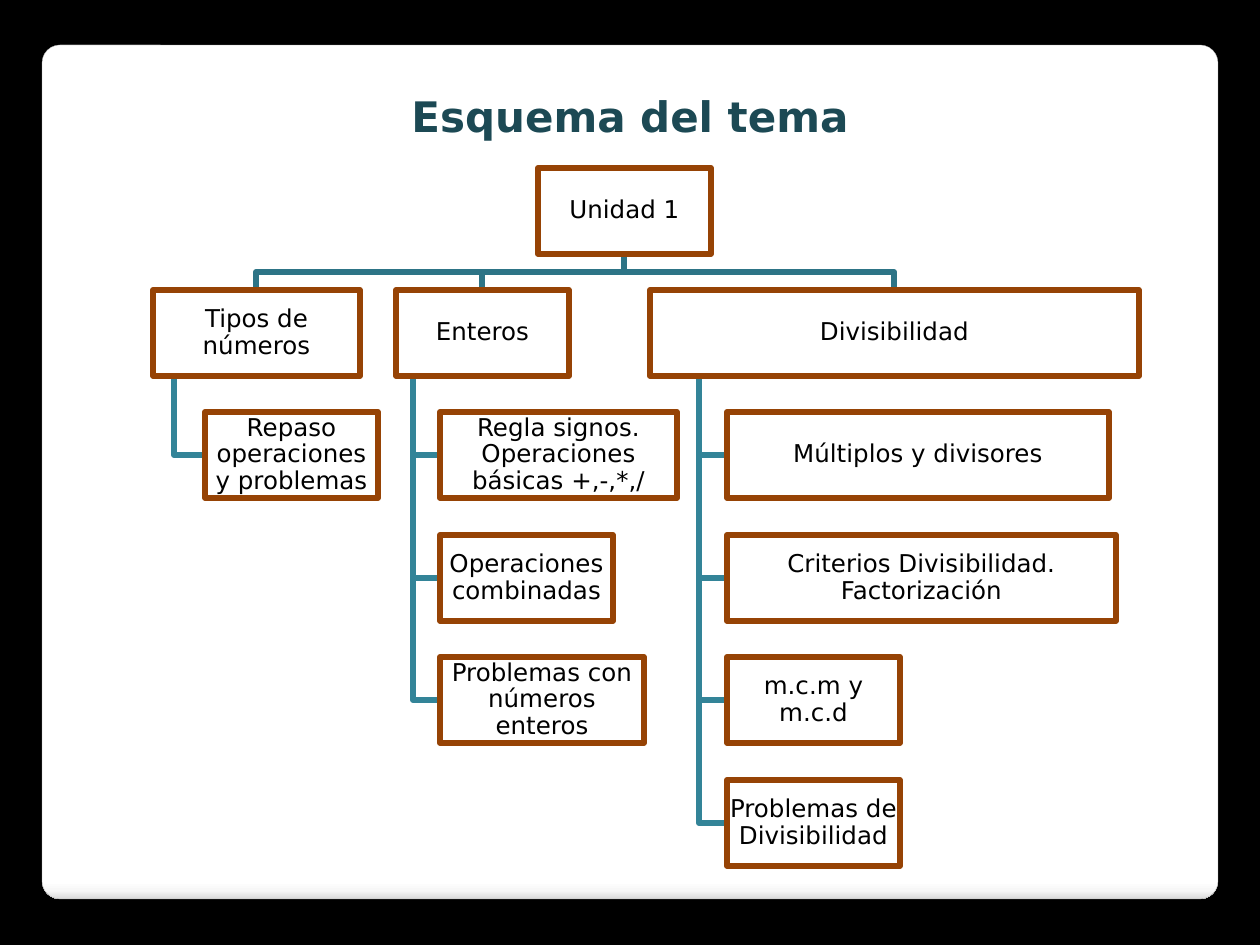
"""Build the topic outline slide: a three-branch organisation chart on a white panel."""
from lxml import etree
from pptx import Presentation
from pptx.dml.color import RGBColor
from pptx.enum.shapes import MSO_SHAPE as SHAPE
from pptx.enum.text import MSO_ANCHOR as ANCHOR, MSO_AUTO_SIZE as AUTO_SIZE, PP_ALIGN as ALIGN
from pptx.oxml.ns import qn
from pptx.util import Emu, Pt

PX = 914400 / 126
FONT = "DejaVu Sans"
BLACK = RGBColor(0x00, 0x00, 0x00)
WHITE = RGBColor(0xFF, 0xFF, 0xFF)
PANEL_EDGE = RGBColor(0xA4, 0xA4, 0xA4)
TITLE = RGBColor(0x1C, 0x49, 0x54)
BROWN = RGBColor(0x96, 0x43, 0x05)
TEAL_TOP = RGBColor(0x2D, 0x74, 0x86)
TEAL_SUB = RGBColor(0x33, 0x84, 0x98)
PANEL_STOPS = [(0, "FFFFFF"), (98, "FFFFFF"), (99, "F7F7F7"), (100, "DADADA")]

BOX_W, BOX_H = 173, 86
LINE_W = Pt(3.35)
ROOT = ("Unidad 1", 538, BOX_W)
BRANCHES = [
    ("Tipos de números", 153, 207, 205, [("Repaso operaciones y problemas", BOX_W)]),
    ("Enteros", 396, BOX_W, 440, [
        ("Regla signos. Operaciones básicas +,-,*,/", 237),
        ("Operaciones combinadas", BOX_W),
        ("Problemas con números enteros", 204),
    ]),
    ("Divisibilidad", 650, 489, 727, [
        ("Múltiplos y divisores", 382),
        ("Criterios Divisibilidad. Factorización", 389),
        ("m.c.m y m.c.d", BOX_W),
        ("Problemas de Divisibilidad", BOX_W),
    ]),
]


def px(*values):
    return [Emu(round(v * PX)) for v in values]


def row_top(row):
    return 168 + row * 612 // 5


def style_text(p, size, color, bold=False):
    p.alignment = ALIGN.CENTER
    font = p.runs[0].font
    font.name, font.size, font.bold = FONT, Pt(size), bold
    font.color.rgb = color


def add_panel(s):
    sp = s.shapes.add_shape(SHAPE.ROUNDED_RECTANGLE, *px(42, 45, 1176, 854))
    sp.adjustments[0] = 0.021
    sp.shadow.inherit = False
    sp.fill.gradient()
    sp.fill.gradient_angle = 270
    stops = sp._element.spPr.find(".//" + qn("a:gsLst"))
    for old in list(stops):
        stops.remove(old)
    for pos, color in PANEL_STOPS:
        stop = etree.SubElement(stops, qn("a:gs"), pos=str(pos * 1000))
        etree.SubElement(stop, qn("a:srgbClr"), val=color)
    sp.line.color.rgb = PANEL_EDGE
    sp.line.width = Pt(0.16)


def add_title(s, text):
    tf = s.shapes.add_textbox(*px(49, 84, 1162, 63)).text_frame
    tf.word_wrap = True
    tf.auto_size = AUTO_SIZE.SHAPE_TO_FIT_TEXT
    tf.text = text
    style_text(tf.paragraphs[0], 24, TITLE, bold=True)


def add_box(s, text, x, w, row):
    sp = s.shapes.add_shape(SHAPE.RECTANGLE, *px(x, row_top(row), w, BOX_H))
    sp.shadow.inherit = False
    sp.fill.solid()
    sp.fill.fore_color.rgb = WHITE
    sp.line.color.rgb = BROWN
    sp.line.width = LINE_W
    tf = sp.text_frame
    tf.word_wrap = True
    tf.vertical_anchor = ANCHOR.MIDDLE
    tf.margin_left, tf.margin_top, tf.margin_right, tf.margin_bottom = px(1, 1, 1, 1)
    tf.text = text
    p = tf.paragraphs[0]
    p.line_spacing = 0.9
    style_text(p, 14, BLACK)


def add_elbow(s, points, color):
    builder = s.shapes.build_freeform(*points[0], scale=PX)
    builder.add_line_segments(points[1:], close=False)
    sp = builder.convert_to_shape()
    sp.shadow.inherit = False
    sp.fill.background()
    sp.line.color.rgb = color
    sp.line.width = LINE_W


def add_links(s):
    _, root_x, root_w = ROOT
    start_x, start_y = root_x + root_w // 2, row_top(0) + BOX_H
    end_y = row_top(1)
    mid_y = (start_y + end_y) // 2
    for _, x, w, _, _ in BRANCHES:
        end_x = x + w // 2
        add_elbow(s, [(start_x, start_y), (start_x, mid_y), (end_x, mid_y), (end_x, end_y)], TEAL_TOP)
    for _, x, w, child_x, children in BRANCHES:
        stem = x + round(w / 10)
        for row in range(2, 2 + len(children)):
            y = row_top(row) + BOX_H // 2
            add_elbow(s, [(stem, end_y + BOX_H), (stem, y), (child_x, y)], TEAL_SUB)


def add_boxes(s):
    add_box(s, *ROOT, 0)
    for text, x, w, child_x, children in BRANCHES:
        add_box(s, text, x, w, 1)
        for row, (child, child_w) in enumerate(children, 2):
            add_box(s, child, child_x, child_w, row)


def main():
    prs = Presentation()
    prs.slide_width, prs.slide_height = px(1260, 945)
    s = prs.slides.add_slide(prs.slide_layouts[6])
    s.background.fill.solid()
    s.background.fill.fore_color.rgb = BLACK
    add_panel(s)
    add_title(s, "Esquema del tema")
    add_links(s)
    add_boxes(s)
    prs.save("out.pptx")


if __name__ == "__main__":
    main()
